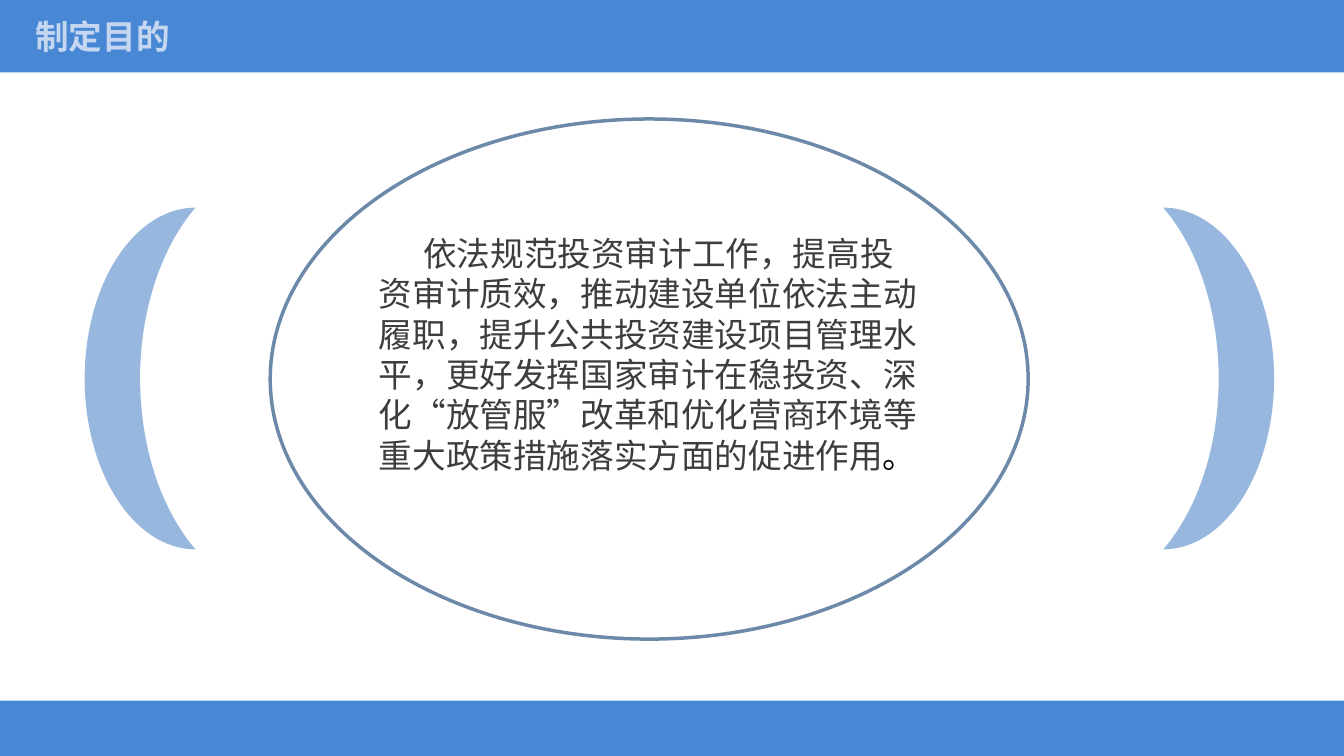
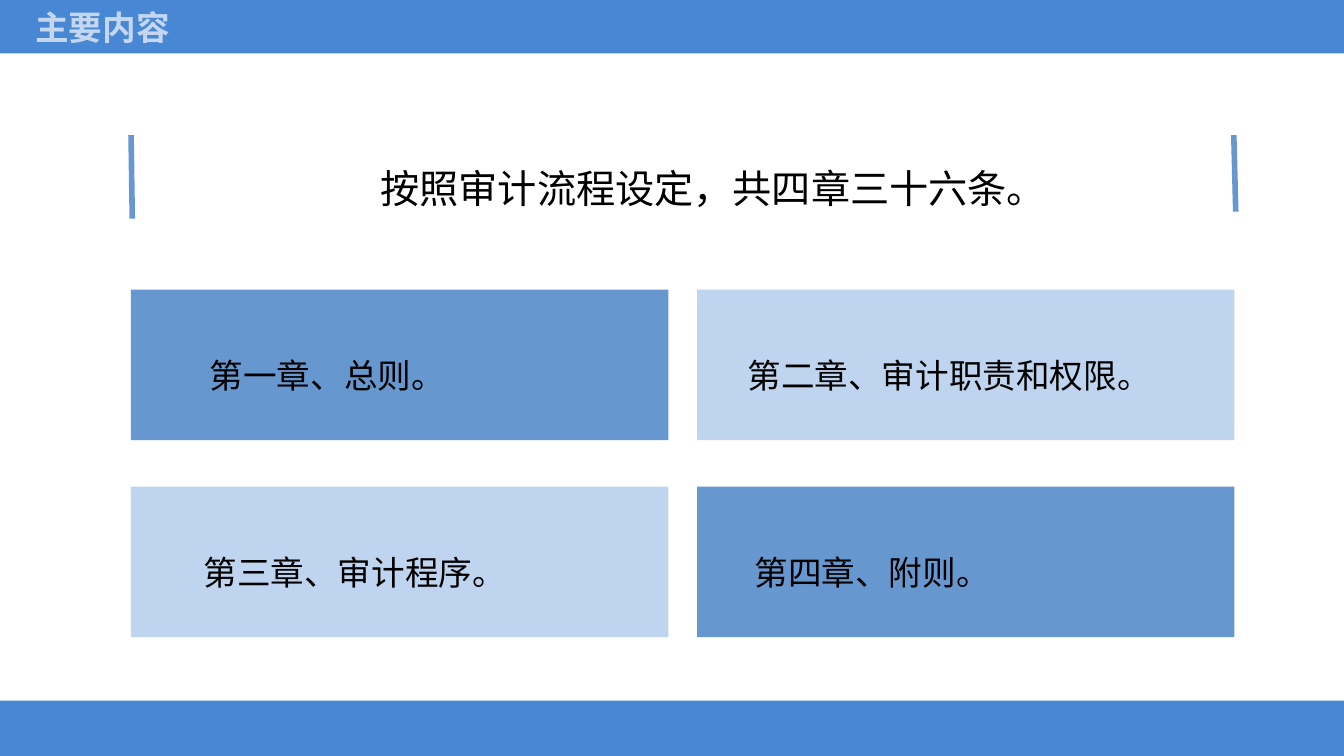
from lxml import etree
from pptx import Presentation
from pptx.dml.color import RGBColor
from pptx.enum.shapes import MSO_CONNECTOR, MSO_SHAPE
from pptx.enum.text import MSO_ANCHOR, MSO_AUTO_SIZE, PP_ALIGN
from pptx.oxml.ns import qn
from pptx.util import Pt

RECT, OVAL, MOON = MSO_SHAPE.RECTANGLE, MSO_SHAPE.OVAL, MSO_SHAPE.MOON
LEFT, CENTER = PP_ALIGN.LEFT, PP_ALIGN.CENTER
TOP, MIDDLE = MSO_ANCHOR.TOP, MSO_ANCHOR.MIDDLE

FONT = "Noto Sans CJK SC"
COLORS = {
    "band": "4887D3",
    "title": "C4D6F0",
    "ring": "6D89A9",
    "moon": "97B7DE",
    "dark_card": "6797CF",
    "light_card": "BFD5EF",
    "body": "3D3D3D",
    "black": "000000",
}
WIDTH, HEIGHT = 960, 540
FOOTER_HEIGHT = 39.6

PURPOSE = (
    "依法规范投资审计工作，提高投资审计质效，推动建设单位依法主动履职，"
    "提升公共投资建设项目管理水平，更好发挥国家审计在稳投资、"
    "深化“放管服”改革和优化营商环境等重大政策措施落实方面的促进作用"
)
SUMMARY = "按照审计流程设定，共四章三十六条。"
# Chapter text and its left inset in the card
CHAPTERS = [
    ("第一章、总则。", 56.2),
    ("第二章、审计职责和权限。", 36),
    ("第三章、审计程序。", 51.8),
    ("第四章、附则。", 41),
]
MOONS = [(60.5, 0), (830.9, 180)]  # left, rotation
CARD_LEFT, CARD_TOP = 93.6, 206.9
CARD_WIDTH, CARD_HEIGHT = 383.8, 107.5
COLUMN_STEP, ROW_STEP = 404.4, 140.8
SIDE_RULES = [((93.6, 96.5), (94.5, 156.2)), ((881.3, 96.5), (882.7, 151.2))]


def rgb(name):
    return RGBColor.from_string(COLORS[name])


def place(shape, left, top, width, height):
    shape.left, shape.top = Pt(left), Pt(top)
    shape.width, shape.height = Pt(width), Pt(height)


def add_figure(slide, kind, box, fill=None, line=None):
    figure = slide.shapes.add_shape(kind, *map(Pt, box))
    figure.shadow.inherit = False
    if fill:
        figure.fill.solid()
        figure.fill.fore_color.rgb = rgb(fill)
    else:
        figure.fill.background()
    if line:
        figure.line.color.rgb = rgb(line)
        figure.line.width = Pt(2.5)
    else:
        figure.line.fill.background()
    return figure


def write(shape, text, size, color, align=LEFT, anchor=TOP, spacing=1.0, bold=False):
    frame = shape.text_frame
    frame.text = text
    frame.word_wrap = True
    frame.auto_size = MSO_AUTO_SIZE.NONE
    frame.vertical_anchor = anchor
    paragraph = frame.paragraphs[0]
    paragraph.alignment = align
    paragraph.line_spacing = spacing
    paragraph.space_before = Pt(0)
    font = paragraph.font
    font.name, font.size, font.bold = FONT, Pt(size), bold
    font.color.rgb = rgb(color)
    set_east_asian_font(font)
    return paragraph


def set_east_asian_font(font):
    properties = font._element if hasattr(font, "_element") else font._rPr
    latin = properties.find(qn("a:latin"))
    east_asian = etree.Element(qn("a:ea"), typeface=FONT)
    latin.addnext(east_asian)


def remove_bullet(paragraph, first_line=0):
    properties = paragraph._p.get_or_add_pPr()
    properties.set("marL", "0")
    properties.set("indent", str(Pt(first_line)))
    default_run = properties.find(qn("a:defRPr"))
    default_run.addprevious(etree.Element(qn("a:buNone")))


def add_page(deck, title, title_top, band_top, band_height):
    """Add a slide with its title on the top band and a plain bottom band."""
    slide = deck.slides.add_slide(deck.slide_layouts[1])
    heading = slide.shapes.title
    for top, height in ((band_top, band_height), (HEIGHT - FOOTER_HEIGHT, FOOTER_HEIGHT)):
        band = add_figure(slide, RECT, (0, top, WIDTH, height), "band")
        heading._element.addprevious(band._element)
    place(heading, 18, title_top, 111, 36)
    write(heading, title, 24, "title", bold=True)
    heading.text_frame.word_wrap = False
    return slide


def build_purpose(deck):
    slide = add_page(deck, "制定目的", 7.9, 0, 51.8)
    add_figure(slide, OVAL, (193, 85, 541.4, 371.5), line="ring")
    for left, rotation in MOONS:
        moon = add_figure(slide, MOON, (left, 148.3, 79.2, 244.1), "moon")
        moon.rotation = rotation
    body = slide.placeholders[1]
    place(body, 263.5, 162.7, 400.4, 181.4)
    paragraph = write(body, PURPOSE, 24, "body")
    remove_bullet(paragraph, 31.7)
    full_stop = paragraph.add_run()
    full_stop.text = "。"
    full_stop.font.color.rgb = rgb("black")


def build_contents(deck):
    slide = add_page(deck, "主要内容", 1.4, -1.4, 39.6)
    body = slide.placeholders[1]
    place(body, 184.3, 97.2, 650.2, 58.3)
    remove_bullet(write(body, SUMMARY, 28, "black", CENTER, spacing=1.5))

    for index, (chapter, inset) in enumerate(CHAPTERS):
        row, column = divmod(index, 2)
        box = (CARD_LEFT + column * COLUMN_STEP, CARD_TOP + row * ROW_STEP,
               CARD_WIDTH, CARD_HEIGHT)
        fill = "dark_card" if row == column else "light_card"
        card = add_figure(slide, RECT, box, fill)
        write(card, chapter, 24, "black", anchor=MIDDLE, spacing=1.5)
        card.text_frame.margin_left = Pt(inset)

    for start, end in SIDE_RULES:
        rule = slide.shapes.add_connector(MSO_CONNECTOR.STRAIGHT, *map(Pt, start + end))
        rule.line.color.rgb = rgb("dark_card")
        rule.line.width = Pt(4)
        etree.SubElement(rule._element.spPr, qn("a:effectLst"))


def main():
    deck = Presentation()
    deck.slide_width, deck.slide_height = Pt(WIDTH), Pt(HEIGHT)
    build_purpose(deck)
    build_contents(deck)
    deck.save("out.pptx")


if __name__ == "__main__":
    main()
